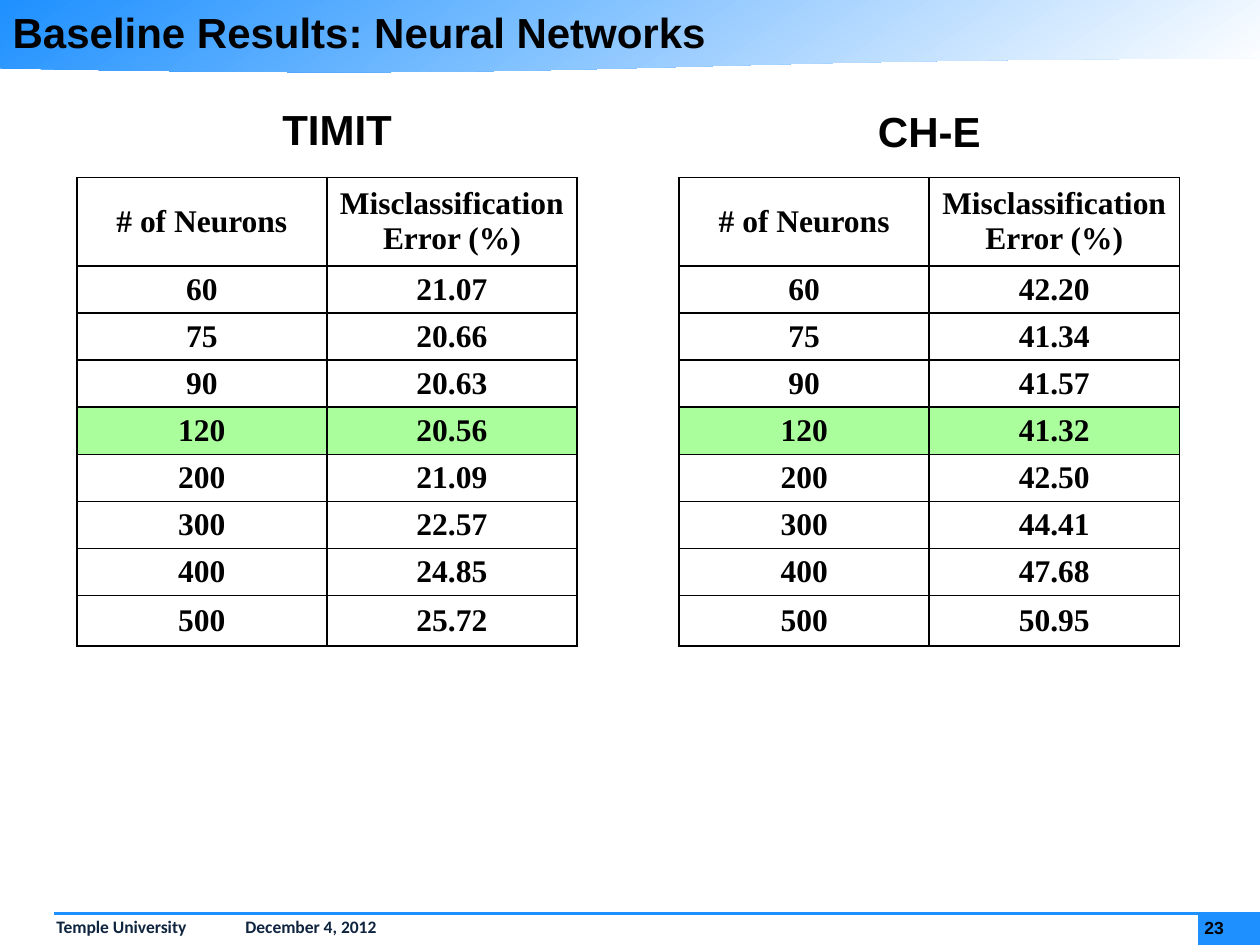
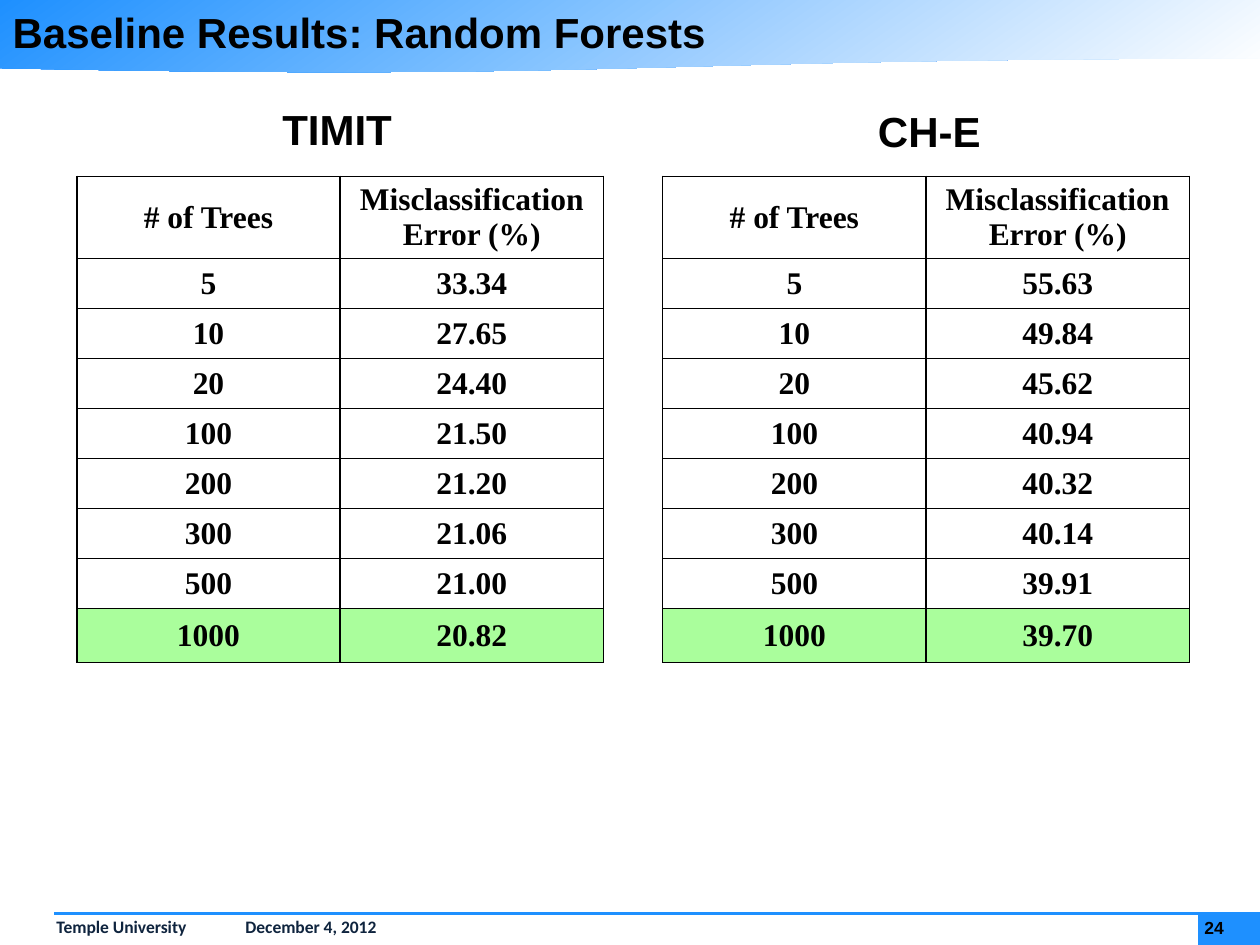
from dataclasses import dataclass
from typing import NamedTuple

from lxml import etree
from pptx import Presentation
from pptx import util as u
from pptx.dml.color import RGBColor
from pptx.enum import shapes, text
from pptx.oxml import ns


class TextStyle(NamedTuple):
    font: str
    size: int
    color: str


@dataclass(frozen=True)
class Theme:
    accent: str = "1E90FF"
    paper: str = "FFFFFF"
    ink: str = "000000"
    best: str = "AAFE9C"
    border_pt: float = 1
    rule_pt: float = 1.5
    title: TextStyle = TextStyle("Arial", 24, "000000")
    cell: TextStyle = TextStyle("Times New Roman", 18, "000000")
    footer: TextStyle = TextStyle("Calibri", 10, "0F243E")
    page: TextStyle = TextStyle("Arial", 10, "000000")


THEME = Theme()


class Box(NamedTuple):
    left: float
    top: float
    width: float
    height: float

    def emu(self) -> list[int]:
        return [u.Inches(side) for side in self]


@dataclass(frozen=True)
class Corpus:
    name: str
    heading: Box
    errors: tuple[str, ...]
    table_left: float


@dataclass(frozen=True)
class ResultSlide:
    method: str
    unit: str
    page: int
    sizes: tuple[str, ...]
    best_size: str
    table_top: float
    table_width: float
    table_height: float
    header_height: float
    last_height: float
    corpora: tuple[Corpus, ...]


TIMIT_HEADING = Box(1.78, 0.82, 1.79, 0.4)
CHE_HEADING = Box(5.53, 0.84, 3.69, 0.4)

RESULTS = (
    ResultSlide(
        "Neural Networks", "Neurons", 23,
        ("60", "75", "90", "120", "200", "300", "400", "500"), "120",
        1.41, 3.97, 3.72, 0.7, 0.4,
        (
            Corpus("TIMIT", TIMIT_HEADING,
                   ("21.07", "20.66", "20.63", "20.56", "21.09", "22.57", "24.85", "25.72"), 0.61),
            Corpus("CH-E", CHE_HEADING,
                   ("42.20", "41.34", "41.57", "41.32", "42.50", "44.41", "47.68", "50.95"), 5.39),
        ),
    ),
    ResultSlide(
        "Random Forests", "Trees", 24,
        ("5", "10", "20", "100", "200", "300", "500", "1000"), "1000",
        1.4, 4.18, 3.86, 0.65, 0.43,
        (
            Corpus("TIMIT", TIMIT_HEADING,
                   ("33.34", "27.65", "24.40", "21.50", "21.20", "21.06", "21.00", "20.82"), 0.61),
            Corpus("CH-E", CHE_HEADING,
                   ("55.63", "49.84", "45.62", "40.94", "40.32", "40.14", "39.91", "39.70"), 5.26),
        ),
    ),
)


def rgb(color: str) -> RGBColor:
    return RGBColor.from_string(color)


def style_paragraph(paragraph, style: TextStyle, align=text.PP_ALIGN.LEFT) -> None:
    paragraph.alignment = align
    font = paragraph.font
    font.name, font.size, font.bold = style.font, u.Pt(style.size), True
    font.color.rgb = rgb(style.color)


def set_margins(target, across: float, down: float) -> None:
    target.margin_left = target.margin_right = u.Inches(across)
    target.margin_top = target.margin_bottom = u.Inches(down)


def add_label(slide, box: Box, words: str, style: TextStyle,
              align=text.PP_ALIGN.LEFT, anchor=text.MSO_ANCHOR.TOP) -> None:
    """Add one line of text in a box without margins."""
    frame = slide.shapes.add_textbox(*box.emu()).text_frame
    frame.word_wrap = True
    frame.vertical_anchor = anchor
    set_margins(frame, 0, 0)
    frame.text = words
    style_paragraph(frame.paragraphs[0], style, align)


def add_block(slide, preset, box: Box):
    block = slide.shapes.add_shape(preset, *box.emu())
    block.shadow.inherit = False
    block.line.fill.background()
    return block


def add_band(slide) -> None:
    band = add_block(slide, shapes.MSO_SHAPE.FLOWCHART_DOCUMENT, Box(0, 0, 10.01, 0.58))
    band.fill.gradient()
    band.fill.gradient_angle = 360 - 55
    for stop, color in zip(band.fill.gradient_stops, (THEME.accent, THEME.paper)):
        stop.color.rgb = rgb(color)


def add_footer(slide, page: int) -> None:
    page_block = add_block(slide, shapes.MSO_SHAPE.RECTANGLE, Box(9.51, 7.24, 0.5, 0.26))
    page_block.fill.solid()
    page_block.fill.fore_color.rgb = rgb(THEME.accent)

    frame = slide.shapes.add_textbox(*Box(0.04, 7.23, 9.97, 0.26).emu()).text_frame
    frame.word_wrap = True
    frame.text = "Temple University\tDecember 4, 2012"
    credit = frame.paragraphs[0]
    credit.line_spacing = 0.95
    properties = credit._p.get_or_add_pPr()
    properties.set("marL", str(u.Inches(0.31)))
    properties.set("indent", "0")
    tabs = etree.SubElement(properties, ns.qn("a:tabLst"))
    etree.SubElement(tabs, ns.qn("a:tab"), pos=str(u.Inches(9.31)), algn="r")
    style_paragraph(credit, THEME.footer)

    rule = slide.shapes.add_connector(
        shapes.MSO_CONNECTOR.STRAIGHT,
        u.Inches(0.43), u.Inches(7.25), u.Inches(10), u.Inches(7.25))
    rule.line.color.rgb = rgb(THEME.accent)
    rule.line.width = u.Pt(THEME.rule_pt)
    etree.SubElement(rule.element.spPr, ns.qn("a:effectLst"))

    add_label(slide, Box(9.56, 7.28, 0.4, 0.17), str(page), THEME.page,
              anchor=text.MSO_ANCHOR.MIDDLE)


def set_title(slide, words: str) -> None:
    title = slide.shapes.title
    title.left, title.top, title.width, title.height = Box(0, 0, 10, 0.43).emu()
    frame = title.text_frame
    frame.text = words
    frame.word_wrap = True
    frame.auto_size = text.MSO_AUTO_SIZE.NONE
    frame.vertical_anchor = text.MSO_ANCHOR.TOP
    set_margins(frame, 0.1, 0.05)
    style_paragraph(frame.paragraphs[0], THEME.title)
    slide.shapes.element.append(title.element)  # in front of the band


def add_borders(cell) -> None:
    properties = cell._tc.get_or_add_tcPr()
    for side in "LRTB":
        border = etree.SubElement(properties, ns.qn(f"a:ln{side}"),
                                  w=str(u.Pt(THEME.border_pt)))
        fill = etree.SubElement(border, ns.qn("a:solidFill"))
        etree.SubElement(fill, ns.qn("a:srgbClr"), val=THEME.ink)


def fill_cell(cell, words: str, is_best: bool) -> None:
    cell.text = words
    cell.vertical_anchor = text.MSO_ANCHOR.MIDDLE
    set_margins(cell, 0.07, 0)
    style_paragraph(cell.text_frame.paragraphs[0], THEME.cell, text.PP_ALIGN.CENTER)
    add_borders(cell)  # borders precede the fill in the cell properties
    if is_best:
        cell.fill.solid()
        cell.fill.fore_color.rgb = rgb(THEME.best)
    else:
        cell.fill.background()


def add_error_table(slide, result: ResultSlide, corpus: Corpus) -> None:
    rows = [(f"# of {result.unit}", "Misclassification Error (%)"),
            *zip(result.sizes, corpus.errors)]
    box = Box(corpus.table_left, result.table_top, result.table_width, result.table_height)
    table = slide.shapes.add_table(len(rows), 2, *box.emu()).table
    table.first_row = table.horz_banding = False
    for column in table.columns:
        column.width = u.Inches(result.table_width / 2)

    inner_count = len(rows) - 2
    inner = (result.table_height - result.header_height - result.last_height) / inner_count
    heights = [result.header_height, *[inner] * inner_count, result.last_height]
    for r, (values, height) in enumerate(zip(rows, heights)):
        table.rows[r].height = u.Inches(height)
        for c, value in enumerate(values):
            fill_cell(table.cell(r, c), value, values[0] == result.best_size)


def add_result_slide(prs, result: ResultSlide) -> None:
    slide = prs.slides.add_slide(prs.slide_layouts.get_by_name("Title Only"))
    add_band(slide)
    add_footer(slide, result.page)
    set_title(slide, f"Baseline Results: {result.method}")
    for corpus in result.corpora:
        add_label(slide, corpus.heading, corpus.name, THEME.title, text.PP_ALIGN.CENTER)
        add_error_table(slide, result, corpus)


def main() -> None:
    prs = Presentation()
    prs.slide_width, prs.slide_height = u.Inches(10), u.Inches(7.5)
    for result in RESULTS:
        add_result_slide(prs, result)
    prs.save("out.pptx")


if __name__ == "__main__":
    main()
